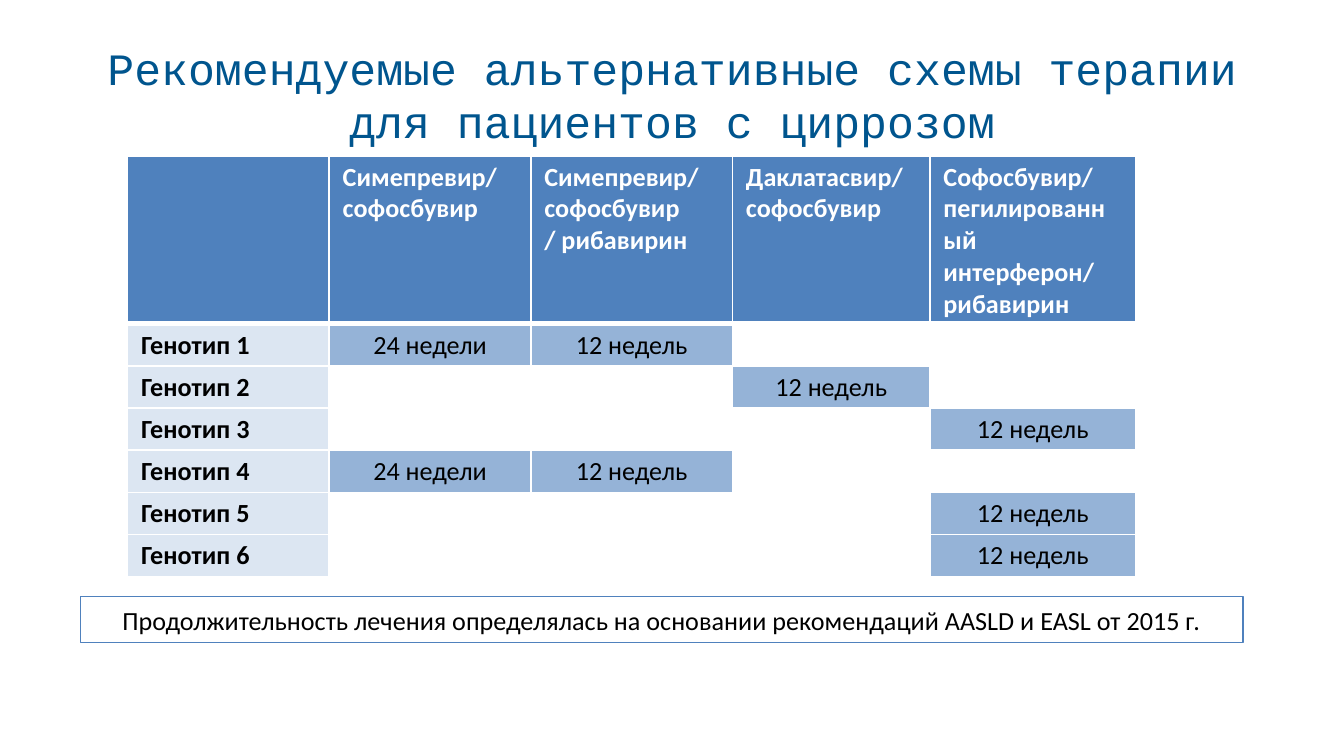
from lxml import etree
from pptx import Presentation
from pptx.dml.color import RGBColor
from pptx.enum.shapes import MSO_SHAPE
from pptx.enum.text import MSO_ANCHOR, MSO_AUTO_SIZE, PP_ALIGN
from pptx.oxml.ns import qn
from pptx.util import Inches, Pt

RECT = MSO_SHAPE.RECTANGLE
MIDDLE = MSO_ANCHOR.MIDDLE
GROW = MSO_AUTO_SIZE.SHAPE_TO_FIT_TEXT
LEFT, CENTER = PP_ALIGN.LEFT, PP_ALIGN.CENTER

TITLE_BLUE = RGBColor(0x00, 0x55, 0x8E)
HEADER_BLUE = RGBColor(0x4F, 0x81, 0xBD)
LABEL_BLUE = RGBColor(0xDC, 0xE6, 0xF2)
DOSE_BLUE = RGBColor(0x95, 0xB3, 0xD7)
WHITE = RGBColor(0xFF, 0xFF, 0xFF)
BLACK = RGBColor(0, 0, 0)

# Content
TITLE = "Рекомендуемые альтернативные схемы терапии для пациентов с циррозом"
HEADERS = [
    "",
    "Симепревир/ софосбувир",
    "Симепревир/ софосбувир\n/ рибавирин",
    "Даклатасвир/софосбувир",
    "Софосбувир/\nпегилированный интерферон/ рибавирин",
]
W12, W24 = "12 недель", "24 недели"
ROWS = [
    ["Генотип 1", W24, W12, "", ""],
    ["Генотип 2", "", "", W12, ""],
    ["Генотип 3", "", "", "", W12],
    ["Генотип 4", W24, W12, "", ""],
    ["Генотип 5", "", "", "", W12],
    ["Генотип 6", "", "", "", W12],
]
NOTE = ("Продолжительность лечения определялась на основании рекомендаций "
        "AASLD и EASL от 2015 г.")
COL_WIDTHS = [1.5, 1.5, 1.5, 1.47, 1.53]
HEADER_HEIGHT, ROW_HEIGHT = 1.25, 0.31


def write(tf, text, font, size, color, bold=False, align=LEFT):
    tf.text = text
    for p in tf.paragraphs:
        p.alignment = align
        for r in p.runs:
            r.font.name, r.font.size, r.font.bold = font, Pt(size), bold
            r.font.color.rgb = color
        if not p.runs:  # keeps empty cells from growing their row
            etree.SubElement(p._p, qn("a:endParaRPr"), sz=str(size * 100))


def set_borders(cell, top, bottom):
    tcPr = cell._tc.get_or_add_tcPr()
    widths = {"lnL": 1, "lnR": 1, "lnT": top, "lnB": bottom}
    for i, (tag, width) in enumerate(widths.items()):
        ln = etree.Element(qn("a:" + tag), w=str(Pt(width)))
        fill = etree.SubElement(ln, qn("a:solidFill"))
        etree.SubElement(fill, qn("a:srgbClr"), val=str(WHITE))
        tcPr.insert(i, ln)


# 16:9 slide
prs = Presentation()
prs.slide_width = Inches(10)
prs.slide_height = prs.slide_width * 9 // 16
s = prs.slides.add_slide(prs.slide_layouts[6])

# Title
tf = s.shapes.add_textbox(Inches(0.5), Inches(0.23), Inches(9), Inches(0.94)).text_frame
tf.word_wrap = True
tf.vertical_anchor = MIDDLE
write(tf, TITLE, "Courier New", 24, TITLE_BLUE, align=CENTER)

# Therapy table
grid = [HEADERS] + ROWS
table = s.shapes.add_table(
    len(grid), len(HEADERS), Inches(0.95), Inches(1.16), Inches(sum(COL_WIDTHS)),
    Inches(HEADER_HEIGHT + ROW_HEIGHT * len(ROWS))).table
table.horz_banding = False
for col, width in zip(table.columns, COL_WIDTHS):
    col.width = Inches(width)

for i, texts in enumerate(grid):
    table.rows[i].height = Inches(ROW_HEIGHT if i else HEADER_HEIGHT)
    for j, text in enumerate(texts):
        cell = table.cell(i, j)
        if i == 0:
            fill, color = HEADER_BLUE, WHITE
        else:
            fill = LABEL_BLUE if j == 0 else DOSE_BLUE if text else WHITE
            color = BLACK
        is_heading = i == 0 or j == 0
        cell.margin_top = cell.margin_bottom = Inches(0.04)
        cell.fill.solid()
        cell.fill.fore_color.rgb = fill
        write(cell.text_frame, text, "Calibri", 14, color, is_heading,
              LEFT if is_heading else CENTER)
        set_borders(cell, top=3 if i == 1 else 1, bottom=3 if i == 0 else 1)

# Note under the table
note = s.shapes.add_shape(RECT, Inches(0.6), Inches(4.44), Inches(8.65), Inches(0.34))
note.shadow.inherit = False
note.fill.background()
note.line.color.rgb = HEADER_BLUE
note.line.width = Pt(0.75)
tf = note.text_frame
tf.word_wrap = True
tf.auto_size = GROW
write(tf, NOTE, "Calibri", 14, BLACK, align=CENTER)

prs.save("out.pptx")
